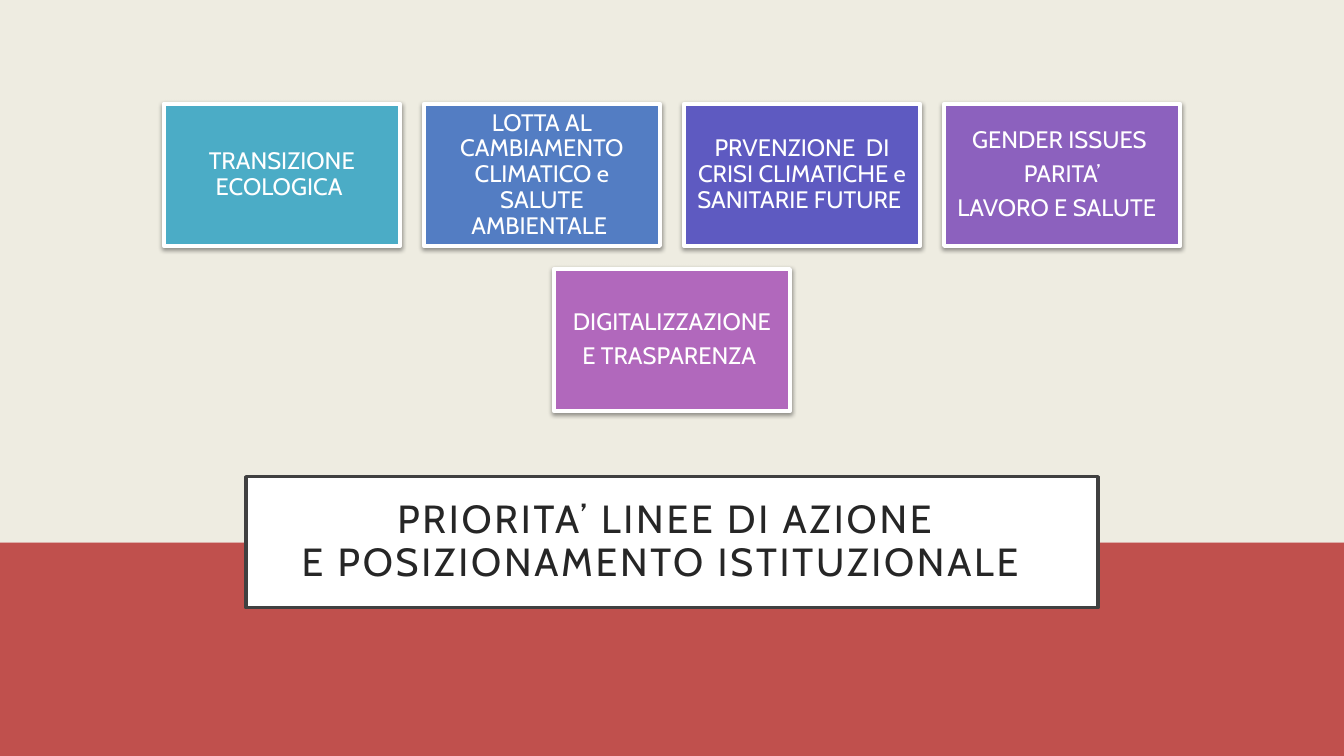
import lxml.etree
import pptx
import pptx.dml.color
import pptx.enum.shapes
import pptx.enum.text
import pptx.oxml.ns
import pptx.util

Inches, Pt = pptx.util.Inches, pptx.util.Pt
qn = pptx.oxml.ns.qn

COLORS = {
    "sand": "EEECE1", "red": "C0504D", "white": "FFFFFF", "black": "000000",
    "frame": "404040", "ink": "262626", "teal": "4BACC6", "blue": "537DC3",
    "indigo": "5E5AC1", "violet": "8C61BE", "orchid": "B168BC",
}


def rgb(name):
    return pptx.dml.color.RGBColor.from_string(COLORS[name])


def write_text(s, text, font="Cabin", size=17, color="white", inset=0.07,
               after=0, spacing=0):
    """Newlines separate paragraphs, vertical tabs break lines."""
    tf = s.text_frame
    tf.word_wrap = True
    tf.vertical_anchor = pptx.enum.text.MSO_ANCHOR.MIDDLE
    tf.margin_left = tf.margin_right = Inches(inset)
    tf.margin_top = tf.margin_bottom = Inches(inset)
    tf.text = text
    for p in tf.paragraphs:
        p.alignment = pptx.enum.text.PP_ALIGN.CENTER
        p.line_spacing = 0.9
        p.space_after = Pt(after)
        for r in p.runs:
            r.font.name = font
            r.font.size = Pt(size)
            r.font.color.rgb = rgb(color)
            if spacing:
                r.font._element.set("spc", str(spacing * 100))


class Deck:
    def __init__(self, width, height):
        self.prs = pptx.Presentation()
        self.prs.slide_width = Inches(width)
        self.prs.slide_height = Inches(height)
        self.slide = self.prs.slides.add_slide(self.prs.slide_layouts[6])

    def rect(self, x, y, w, h, fill, line=None, line_width=0):
        s = self.slide.shapes.add_shape(
            pptx.enum.shapes.MSO_SHAPE.RECTANGLE,
            Inches(x), Inches(y), Inches(w), Inches(h))
        s.shadow.inherit = False
        s.fill.solid()
        s.fill.fore_color.rgb = rgb(fill)
        if line:
            s.line.color.rgb = rgb(line)
            s.line.width = Pt(line_width)
        else:
            s.line.fill.background()
        return s

    def drop_shadow(self, s, color="black", opacity=38, blur=3.1, distance=1.6):
        effects = s._element.spPr.find(qn("a:effectLst"))
        shadow = lxml.etree.SubElement(
            effects, qn("a:outerShdw"), blurRad=str(Pt(blur)),
            dist=str(Pt(distance)), dir="5400000", rotWithShape="0")
        tint = lxml.etree.SubElement(shadow, qn("a:srgbClr"), val=COLORS[color])
        lxml.etree.SubElement(tint, qn("a:alpha"), val=str(opacity * 1000))

    def card(self, x, y, w, h, fill, text):
        s = self.rect(x, y, w, h, fill, "white", 3)
        self.drop_shadow(s)
        write_text(s, text, after=6)

    def title(self, x, y, w, h, text):
        s = self.rect(x, y, w, h, "white", "frame", 2.5)
        write_text(s, text, size=28, color="ink", inset=0.2, spacing=2)


WIDTH, HEIGHT, HORIZON = 13.33, 7.5, 5.38
CARD_W, CARD_H, GAP = 2.34, 1.41, 0.24
CARDS_TOP, ROW_STEP = 1.03, 1.64

PRIORITY_ROWS = [
    [("teal", "TRANSIZIONE ECOLOGICA "),
     ("blue", "LOTTA AL CAMBIAMENTO CLIMATICO e SALUTE AMBIENTALE "),
     ("indigo", "PRVENZIONE  DI CRISI CLIMATICHE e SANITARIE FUTURE "),
     ("violet", "GENDER ISSUES \nPARITA’\nLAVORO E SALUTE  ")],
    [("orchid", "DIGITALIZZAZIONE\nE TRASPARENZA ")],
]


def main():
    deck = Deck(WIDTH, HEIGHT)

    # Background bands
    deck.rect(0, HORIZON, WIDTH, HEIGHT - HORIZON, "red")
    deck.rect(0, 0, WIDTH, HORIZON, "sand")

    # Title box
    deck.title(2.44, 4.73, 8.45, 1.3,
               "PRIORITA’ LINEE DI AZIONE \vE POSIZIONAMENTO ISTITUZIONALE  ")

    # Priority cards, each row centred on the slide
    for i, row in enumerate(PRIORITY_ROWS):
        row_width = len(row) * (CARD_W + GAP) - GAP
        left = (WIDTH - row_width) / 2
        for j, (fill, text) in enumerate(row):
            deck.card(left + j * (CARD_W + GAP), CARDS_TOP + i * ROW_STEP,
                      CARD_W, CARD_H, fill, text)

    deck.prs.save("out.pptx")


if __name__ == "__main__":
    main()
